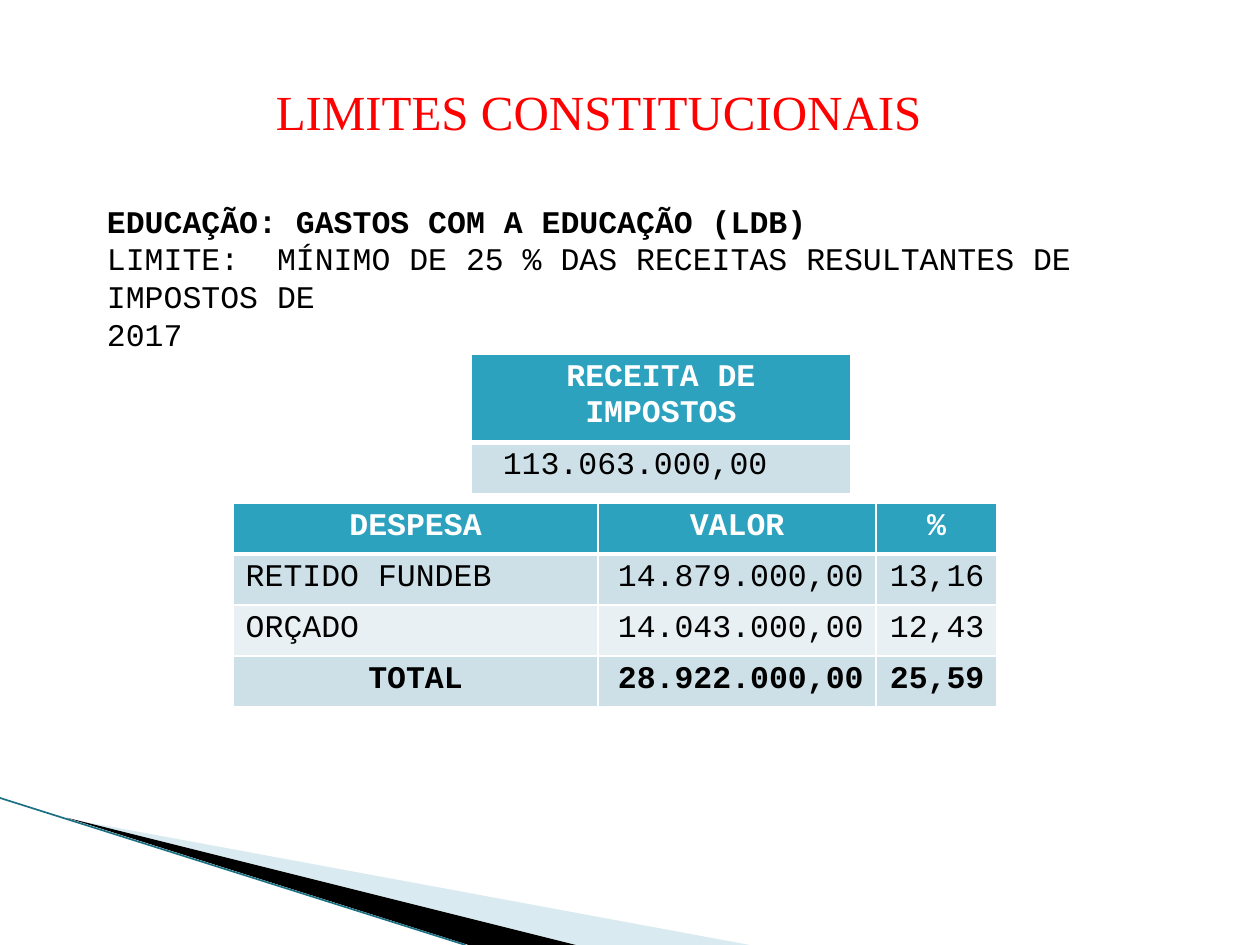
"""Build the slide on constitutional limits for education spending."""
import pptx
import pptx.dml.color
import pptx.enum.shapes
import pptx.enum.text
import pptx.oxml
import pptx.oxml.ns
import pptx.util
from lxml import etree

Pt = pptx.util.Pt
ALIGN = pptx.enum.text.PP_ALIGN
LEFT, CENTER, RIGHT = ALIGN.LEFT, ALIGN.CENTER, ALIGN.RIGHT
WHITE, BLACK, RED, TEAL = "FFFFFF", "000000", "FF0000", "2DA2BF"
BANDS = ("CDE0E8", "E8F0F4")
ROW_HEIGHT = 29.2

TITLE = [("LIMITES CONSTITUCIONAIS", False)]
INTRODUCTION = [
    ("EDUCAÇÃO: GASTOS COM A EDUCAÇÃO (LDB)", True),
    ("LIMITE:  MÍNIMO DE 25 % DAS RECEITAS RESULTANTES DE IMPOSTOS DE", False),
    ("2017", False),
]
REVENUE = [["RECEITA DE IMPOSTOS"], ["113.063.000,00"]]
EXPENSES = [
    ["DESPESA", "VALOR", "%"],
    ["RETIDO FUNDEB", "14.879.000,00", "13,16"],
    ["ORÇADO", "14.043.000,00", "12,43"],
    ["TOTAL", "28.922.000,00", "25,59"],
]
WEDGES = [
    ([(39.6, 468), (428.4, 540), (328.3, 540)], "A0CBDC", 40),
    ([(38.2, 467.3), (329, 540), (267.8, 540)], BLACK, 100),
]


def color(value):
    return pptx.dml.color.RGBColor.from_string(value)


def add_wedge(slide, points, fill, opacity):
    corners = [(Pt(x), Pt(y)) for x, y in points]
    builder = slide.shapes.build_freeform(*corners[0])
    builder.add_line_segments(corners[1:])
    shape = builder.convert_to_shape()
    shape.shadow.inherit = False
    shape.line.fill.background()
    shape.fill.solid()
    shape.fill.fore_color.rgb = color(fill)
    if opacity < 100:
        tint = shape.fill._xPr.find(".//" + pptx.oxml.ns.qn("a:srgbClr"))
        etree.SubElement(tint, pptx.oxml.ns.qn("a:alpha"), val=str(opacity * 1000))


def add_edge(slide, start, end):
    connector = slide.shapes.add_connector(
        pptx.enum.shapes.MSO_CONNECTOR.STRAIGHT, *map(Pt, start + end))
    connector.line.color.rgb = color("1B7083")
    connector.line.width = Pt(0.95)
    properties = connector._element.spPr
    etree.SubElement(properties, pptx.oxml.ns.qn("a:effectLst"))


def write(paragraph, text, size, font, ink, bold=False):
    run = paragraph.add_run()
    run.text = text
    run.font.size = Pt(size)
    run.font.name = font
    run.font.bold = bold
    run.font.color.rgb = color(ink)


def add_text(slide, box, lines, size, font, ink):
    frame = slide.shapes.add_textbox(*map(Pt, box)).text_frame
    frame.word_wrap = True
    for index, (text, bold) in enumerate(lines):
        paragraph = frame.add_paragraph() if index else frame.paragraphs[0]
        write(paragraph, text, size, font, ink, bold)


def add_border(cell, side, width):
    properties = cell._tc.get_or_add_tcPr()
    line = etree.SubElement(
        properties, pptx.oxml.ns.qn("a:ln" + side), w=str(Pt(width)))
    fill = etree.SubElement(line, pptx.oxml.ns.qn("a:solidFill"))
    etree.SubElement(fill, pptx.oxml.ns.qn("a:srgbClr"), val=WHITE)


def add_table(slide, left, top, widths, rows):
    table = slide.shapes.add_table(
        len(rows), len(widths), Pt(left), Pt(top),
        Pt(sum(widths)), Pt(ROW_HEIGHT * len(rows))).table
    table.horz_banding = False
    for column, width in zip(table.columns, widths):
        column.width = Pt(width)
    for row_index, texts in enumerate(rows):
        table.rows[row_index].height = Pt(ROW_HEIGHT)
        header = row_index == 0
        total = texts[0] == "TOTAL"
        for column_index, text in enumerate(texts):
            cell = table.cell(row_index, column_index)
            for side in "LRTB":
                thick = (header and side == "B") or (row_index == 1 and side == "T")
                add_border(cell, side, 3 if thick else 1)
            cell.fill.solid()
            cell.fill.fore_color.rgb = color(
                TEAL if header else BANDS[(row_index - 1) % 2])
            paragraph = cell.text_frame.paragraphs[0]
            centered = header or (total and column_index == 0)
            paragraph.alignment = CENTER if centered else RIGHT if column_index else LEFT
            write(paragraph, text, 18, "Courier New",
                  WHITE if header else BLACK, header or total)
    return table


def main():
    presentation = pptx.Presentation()
    presentation.slide_width, presentation.slide_height = Pt(720), Pt(540)
    slide = presentation.slides.add_slide(presentation.slide_layouts[6])
    for wedge in WEDGES:
        add_wedge(slide, *wedge)
    add_edge(slide, (0, 456), (266, 540))
    add_text(slide, (150.5, 43.2, 402.5, 41), TITLE, 28, "Times New Roman", RED)
    add_text(slide, (54, 111.6, 647.3, 72.7), INTRODUCTION, 18, "Courier New", BLACK)
    revenue = add_table(slide, 269.3, 202.3, [216.7], REVENUE)
    revenue.cell(1, 0).margin_left = Pt(18)
    add_table(slide, 133.2, 287.3, [208.5, 159, 69], EXPENSES)
    presentation.save("out.pptx")


if __name__ == "__main__":
    main()
